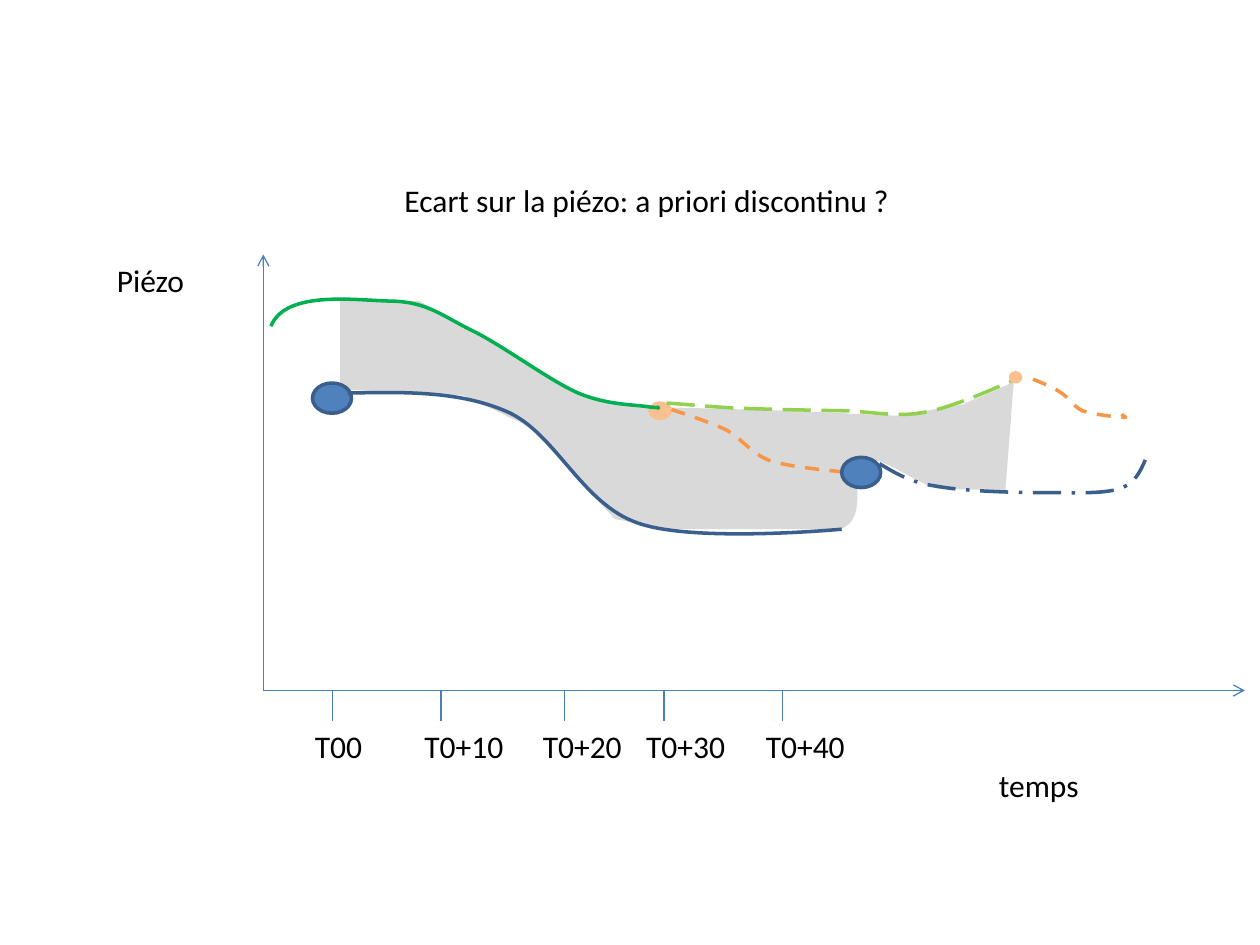
from lxml import etree
from pptx import Presentation
from pptx.dml.color import RGBColor
from pptx.enum.dml import MSO_LINE
from pptx.enum.shapes import MSO_CONNECTOR, MSO_SHAPE
from pptx.enum.text import MSO_ANCHOR, MSO_AUTO_SIZE, PP_ALIGN
from pptx.oxml.ns import qn
from pptx.util import Inches, Pt

STRAIGHT = MSO_CONNECTOR.STRAIGHT
OVAL = MSO_SHAPE.OVAL
DASH, LONG_DASH, LONG_DASH_DOT = MSO_LINE.DASH, MSO_LINE.LONG_DASH, MSO_LINE.LONG_DASH_DOT
LEFT, TOP = PP_ALIGN.LEFT, MSO_ANCHOR.TOP
FIT_SHAPE = MSO_AUTO_SIZE.SHAPE_TO_FIT_TEXT

COLORS = {
    "text": "000000", "axis": "4B7EBC", "gap": "D9D9D9", "blue": "4F81BD", "navy": "3A5F8C",
    "peach": "FAC090", "orange": "F79646", "green": "00B050", "lime": "92D050",
}
FONT = "Calibri"
TITLE = ("Ecart sur la piézo: a priori discontinu ?", 3.11, 1.39, 4.1)
AXIS_LABELS = [("temps", 7.83, 6.03, 0.84), ("Piézo", 0.83, 2.02, 0.74)]
ORIGIN = (2.09, 5.48)
AXIS_ENDS = [(9.88, 5.48), (2.09, 2.02)]
TICK_LENGTH = 0.24
TICKS = [
    ("T00", 2.64, 2.4, 0.58), ("T0+10", 3.5, 3.27, 0.83), ("T0+20", 4.48, 4.21, 0.83),
    ("T0+30", 5.27, 5.03, 0.83), ("T0+40", 6.21, 5.98, 0.83),
]

GAP_AREA = [
    (2.7, 3.15), [(2.7, 2.39)], [(3.33, 2.39)], [(3.98, 2.76)], [(4.62, 3.15)], [(5.2, 3.23)],
    [(6.26, 3.26)], [(7.12, 3.3)], [(7.64, 3.21)], [(7.92, 3.09)], [(8.11, 3)], [(8.05, 2.98)],
    [(7.98, 3.89)], [(7.45, 3.88)], [(7.27, 3.84), (6.98, 3.6), (6.85, 3.65)],
    [(6.72, 3.7), (6.92, 4.11), (6.67, 4.2)], [(5.35, 4.2)], [(4.88, 4.12)], [(4.21, 3.39)],
    [(3.68, 3.14)], [(2.71, 3.09)],
]
LOWER_CURVE = [
    (2.76, 3.12), [(3.2, 3.11), (3.65, 3.1), (4.03, 3.27)],
    [(4.41, 3.44), (4.62, 4), (5.06, 4.15)], [(5.5, 4.31), (6.68, 4.2), (6.68, 4.2)],
    [(6.68, 4.2)],
]
FIRST_CORRECTION = [
    (5.33, 3.25), [(5.48, 3.3), (5.63, 3.35), (5.76, 3.41)],
    [(5.89, 3.48), (5.96, 3.6), (6.12, 3.66)], [(6.29, 3.71), (6.64, 3.74), (6.74, 3.75)],
    [(6.85, 3.76), (6.79, 3.74), (6.74, 3.72)],
]
UPPER_CURVE = [
    (2.15, 2.59), [(2.27, 2.29), (2.86, 2.39), (3.12, 2.39)],
    [(3.39, 2.4), (3.5, 2.5), (3.74, 2.62)], [(3.99, 2.74), (4.36, 3.02), (4.59, 3.12)],
    [(4.83, 3.22), (5.05, 3.21), (5.15, 3.23)], [(5.26, 3.24), (5.23, 3.24), (5.21, 3.23)],
]
LOWER_FORECAST = [
    (6.98, 3.68), [(7.1, 3.75), (7.22, 3.83), (7.44, 3.86)],
    [(7.66, 3.9), (8.06, 3.91), (8.3, 3.91)], [(8.54, 3.91), (8.75, 3.92), (8.88, 3.88)],
    [(9.01, 3.84), (9.05, 3.74), (9.09, 3.65)],
]
UPPER_FORECAST = [
    (5.29, 3.2), [(5.46, 3.21), (5.64, 3.23), (5.86, 3.24)],
    [(6.09, 3.25), (6.65, 3.26), (6.65, 3.26)], [(6.9, 3.26), (7.11, 3.32), (7.35, 3.27)],
    [(7.59, 3.23), (8.08, 3), (8.08, 3)], [(8.08, 3)],
]
SECOND_CORRECTION = [
    (8.2, 3.01), [(8.27, 3.04), (8.35, 3.07), (8.41, 3.11)],
    [(8.48, 3.15), (8.51, 3.22), (8.59, 3.26)], [(8.68, 3.29), (8.85, 3.31), (8.9, 3.31)],
    [(8.96, 3.32), (8.93, 3.31), (8.9, 3.29)],
]
BOUND_STEPS = 16


def rgb(name):
    return RGBColor.from_string(COLORS[name])


def style_shape(shape, fill=None, line=None, dash=None):
    shape.shadow.inherit = False
    if fill:
        shape.fill.solid()
        shape.fill.fore_color.rgb = rgb(fill)
    else:
        shape.fill.background()
    if line:
        shape.line.color.rgb = rgb(line)
        shape.line.width = Pt(2)
        if dash:
            shape.line.dash_style = dash
    else:
        shape.line.fill.background()


def curve_point(controls, t):
    while len(controls) > 1:
        controls = [(a + (c - a) * t, b + (d - b) * t)
                    for (a, b), (c, d) in zip(controls, controls[1:])]
    return controls[0]


def points_for_bounds(outline):
    points = [outline[0]]
    for segment in outline[1:]:
        controls = [points[-1], *segment]
        points += [curve_point(controls, step / BOUND_STEPS)
                   for step in range(1, BOUND_STEPS + 1)]
    return [(Inches(x), Inches(y)) for x, y in points]


def add_command(geometry, tag, points, shape):
    command = etree.SubElement(geometry, qn(tag))
    for x, y in points:
        etree.SubElement(command, qn("a:pt"), x=str(Inches(x) - shape.left),
                         y=str(Inches(y) - shape.top))


def add_outline(slide, outline, close=False, **style):
    start, *points = points_for_bounds(outline)
    builder = slide.shapes.build_freeform(*start)
    builder.add_line_segments(points, close=close)
    shape = builder.convert_to_shape()
    geometry = next(shape.element.iter(qn("a:path")))
    for command in list(geometry):
        geometry.remove(command)
    add_command(geometry, "a:moveTo", outline[:1], shape)
    for segment in outline[1:]:
        tag = "a:cubicBezTo" if len(segment) == 3 else "a:lnTo"
        add_command(geometry, tag, segment, shape)
    if close:
        etree.SubElement(geometry, qn("a:close"))
    style_shape(shape, **style)


def add_marker(slide, left, top, width, height, fill, line):
    shape = slide.shapes.add_shape(OVAL, *map(Inches, (left, top, width, height)))
    style_shape(shape, fill=fill, line=line)


def add_axis_line(slide, start, end, arrow=False):
    connector = slide.shapes.add_connector(STRAIGHT, *map(Inches, (*start, *end)))
    connector.line.color.rgb = rgb("axis")
    connector.line.width = Pt(0.75)
    properties = connector.element.spPr
    if arrow:
        etree.SubElement(properties.find(qn("a:ln")), qn("a:tailEnd"), type="arrow")
    etree.SubElement(properties, qn("a:effectLst"))


def add_text(slide, text, left, top, width, shape=None):
    box = shape or slide.shapes.add_textbox(0, 0, 0, 0)
    box.left, box.top, box.width, box.height = map(Inches, (left, top, width, 0.4))
    frame = box.text_frame
    frame.text = text
    frame.word_wrap = False
    frame.auto_size = FIT_SHAPE
    frame.vertical_anchor = TOP
    paragraph = frame.paragraphs[0]
    paragraph.alignment = LEFT
    font = paragraph.runs[0].font
    font.name, font.size = FONT, Pt(18)
    font.color.rgb = rgb("text")


def main():
    presentation = Presentation()
    presentation.slide_width, presentation.slide_height = Inches(10), Inches(7.5)
    slide = presentation.slides.add_slide(presentation.slide_layouts[5])
    add_text(slide, *TITLE, shape=slide.shapes.title)

    add_outline(slide, GAP_AREA, close=True, fill="gap")
    for end in AXIS_ENDS:
        add_axis_line(slide, ORIGIN, end, arrow=True)
    for label in AXIS_LABELS:
        add_text(slide, *label)

    add_marker(slide, 2.48, 3.04, 0.31, 0.24, "blue", "navy")
    add_outline(slide, LOWER_CURVE, line="navy")
    add_marker(slide, 5.16, 3.2, 0.16, 0.12, "peach", "peach")
    add_outline(slide, FIRST_CORRECTION, line="orange", dash=DASH)
    add_marker(slide, 6.68, 3.63, 0.31, 0.24, "blue", "navy")
    add_outline(slide, UPPER_CURVE, line="green")

    tick_end = ORIGIN[1] + TICK_LENGTH
    for text, x, left, width in TICKS:
        add_axis_line(slide, (x, ORIGIN[1]), (x, tick_end))
        add_text(slide, text, left, tick_end, width)

    add_outline(slide, LOWER_FORECAST, line="navy", dash=LONG_DASH_DOT)
    add_outline(slide, UPPER_FORECAST, line="lime", dash=LONG_DASH)
    add_marker(slide, 8.02, 2.96, 0.08, 0.07, "peach", "peach")
    add_outline(slide, SECOND_CORRECTION, line="orange", dash=DASH)
    presentation.save("out.pptx")


if __name__ == "__main__":
    main()
